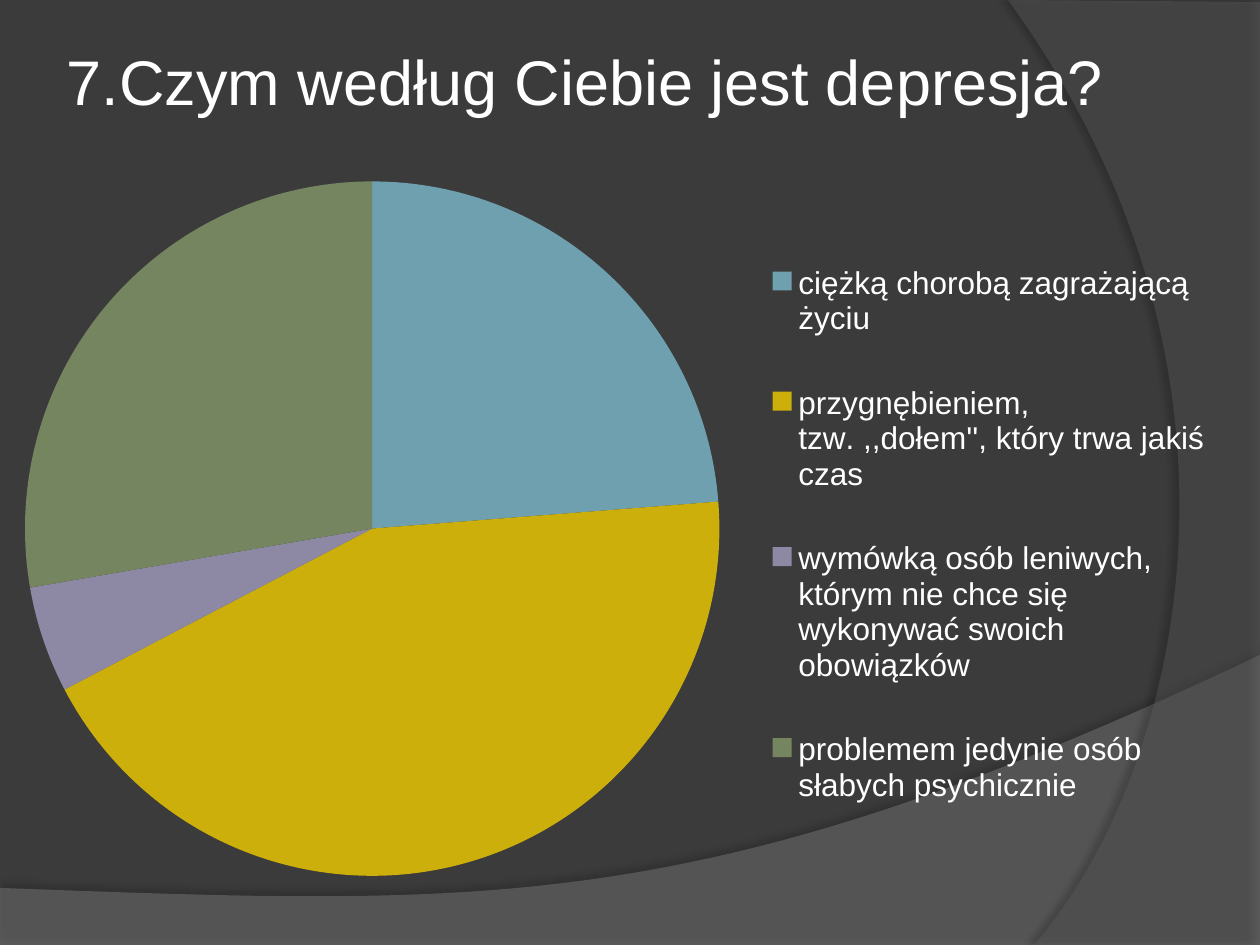
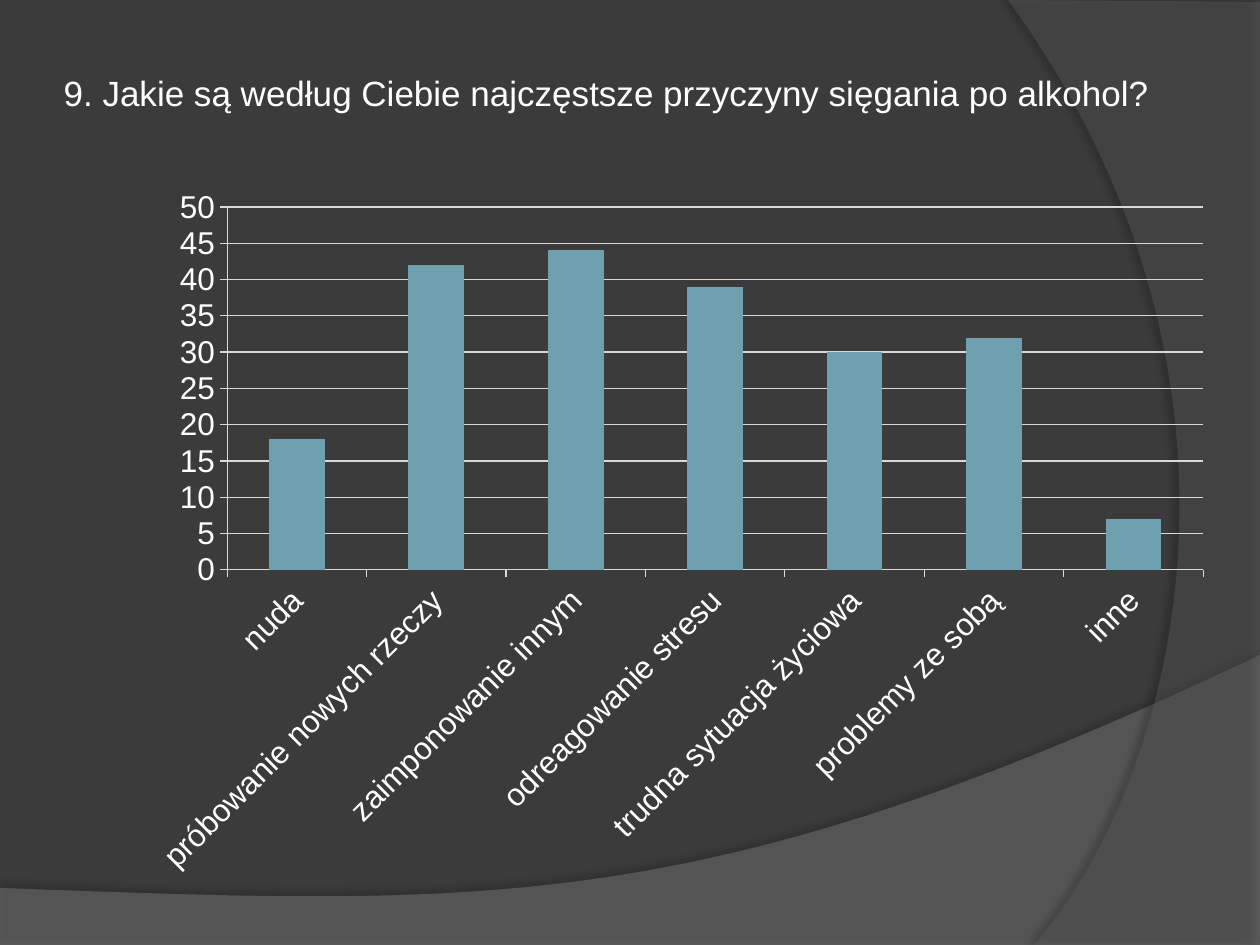
from lxml import etree
from pptx import Presentation
from pptx import util as u
from pptx.chart import data as chart_data
from pptx.dml.color import RGBColor
from pptx.enum import chart as ec, text
from pptx.oxml.ns import qn

SCALE = 914400 / 126
SLIDE_BOX = (0, 0, 1260, 945)
FONT = "Arial"

BACKGROUND = RGBColor(0x3B, 0x3B, 0x3B)
WHITE = RGBColor(0xFF, 0xFF, 0xFF)
BLACK = RGBColor(0x00, 0x00, 0x00)
LOWER_BAND = RGBColor(0x7F, 0x7F, 0x7F)
SIDE_BAND = RGBColor(0x5E, 0x5E, 0x5E)
GRID = RGBColor(0xD9, 0xD9, 0xD9)
BLUE = RGBColor(0x6E, 0xA0, 0xB0)
YELLOW = RGBColor(0xCC, 0xAF, 0x0A)
VIOLET = RGBColor(0x8D, 0x89, 0xA4)
GREEN = RGBColor(0x74, 0x85, 0x60)

DEPRESSION = {
    "ciężką chorobą zagrażającą życiu": (24, BLUE),
    "przygnębieniem, tzw. ,,dołem'', który trwa jakiś czas": (44, YELLOW),
    "wymówką osób leniwych, którym nie chce się wykonywać swoich obowiązków": (5, VIOLET),
    "problemem jedynie osób słabych psychicznie": (28, GREEN),
}
ALCOHOL = {
    "nuda": 18,
    "próbowanie nowych rzeczy": 42,
    "zaimponowanie innym": 44,
    "odreagowanie stresu": 39,
    "trudna sytuacja życiowa": 30,
    "problemy ze sobą": 32,
    "inne": 7,
}


def px(value):
    return u.Emu(round(value * SCALE))


def apply(target, values):
    for name, value in values.items():
        setattr(target, name, value)


def place(shape, box):
    apply(shape, dict(zip(("left", "top", "width", "height"), map(px, box))))


def add_child(parent, tag, **attributes):
    return etree.SubElement(parent, qn(tag), **{k: str(v) for k, v in attributes.items()})


def bend_last_edge(shape, controls):
    edge = shape.element.xpath(".//a:lnTo")[-1]
    edge_end = edge[0]
    bend = etree.Element(qn("a:cubicBezTo"))
    edge.getparent().replace(edge, bend)
    for x, y in controls:
        add_child(bend, "a:pt", x=x - shape.left, y=y - shape.top)
    bend.append(edge_end)


def add_band(slide, box, corners, controls, color, opacity, shadow):
    left, top = box[:2]
    corners, controls = ([(px(left + x), px(top + y)) for x, y in points]
                         for points in (corners, controls))
    builder = slide.shapes.build_freeform(*corners[0])
    builder.add_line_segments(corners[1:], close=True)
    shape = builder.convert_to_shape()
    closing_edges = shape.element.xpath(".//a:lnTo")
    if len(closing_edges) == len(corners):
        closing_edges[-1].getparent().remove(closing_edges[-1])
    bend_last_edge(shape, controls)
    shape.fill.solid()
    shape.fill.fore_color.rgb = color
    shape.line.fill.background()
    shape.shadow.inherit = False
    fill_color = shape.element.xpath("./p:spPr/a:solidFill/a:srgbClr")[0]
    add_child(fill_color, "a:alpha", val=opacity * 1000)
    strength, blur, distance, angle = shadow
    effects = shape.element.xpath("./p:spPr/a:effectLst")[0]
    outer = add_child(effects, "a:outerShdw", blurRad=u.Pt(blur), dist=u.Pt(distance),
                      dir=angle * 60000, algn="ctr", rotWithShape=0)
    shadow_color = add_child(outer, "a:srgbClr", val=BLACK)
    add_child(shadow_color, "a:alpha", val=strength * 1000)
    return shape


def add_master_bands(master, slide, box):
    width, height = box[2:]
    lower = [(0, 888), (0, height + 1), (width, height + 1), (width, 655), (0, 888)]
    side = [(width, 2), (width, height), (1034, height), (1008, 0)]
    bands = [add_band(slide, box, lower, [(704, 919), (493, 906)],
                      LOWER_BAND, 45, (35, 4, 3.5, 270)),
             add_band(slide, box, side, [(1178, 780), (1283, 378)],
                      SIDE_BAND, 40, (45, 4, 4, 180))]
    for index, band in enumerate(bands, 2):
        master.shapes.element.insert(index, band.element)


def add_title(slide, box, wording, size):
    title = slide.shapes.title
    place(title, box)
    title.text = wording
    apply(title.text_frame, {"word_wrap": True, "auto_size": text.MSO_AUTO_SIZE.NONE,
                             "vertical_anchor": text.MSO_ANCHOR.TOP})
    paragraph = title.text_frame.paragraphs[0]
    paragraph.alignment = text.PP_ALIGN.LEFT
    format_font(paragraph.runs[0].font, size)


def format_font(font, size):
    apply(font, {"name": FONT, "size": u.Pt(size)})
    font.color.rgb = WHITE


def set_layout(parent, index, inner, fractions):
    for old in parent.findall(qn("c:layout")):
        parent.remove(old)
    layout = etree.Element(qn("c:layout"))
    parent.insert(index, layout)
    manual = add_child(layout, "c:manualLayout")
    if inner:
        add_child(manual, "c:layoutTarget", val="inner")
    for name in ("xMode", "yMode"):
        add_child(manual, "c:" + name, val="edge")
    for name, value in zip("xywh", fractions):
        add_child(manual, "c:" + name, val=value)


def add_chart(slide, box, kind, categories, values):
    data = chart_data.CategoryChartData()
    data.categories = categories
    data.add_series("Series 1", values)
    chart = slide.shapes.add_chart(kind, *map(px, box), data).chart
    apply(chart, {"has_title": False, "has_legend": False})
    format_font(chart.font, 18)
    return chart


def add_depression_pie(slide, box):
    values, colors = zip(*DEPRESSION.values())
    chart = add_chart(slide, box, ec.XL_CHART_TYPE.PIE, list(DEPRESSION), values)
    set_layout(chart.element.xpath(".//c:plotArea")[0], 0, True, (0.067, 0.16, 0.525, 0.764))
    chart.plots[0].vary_by_categories = True
    for index, color in enumerate(colors):
        fill = chart.plots[0].series[0].points[index].format.fill
        fill.solid()
        fill.fore_color.rgb = color
    chart.has_legend = True
    apply(chart.legend, {"position": ec.XL_LEGEND_POSITION.RIGHT, "include_in_layout": False})
    format_font(chart.legend.font, 18)
    set_layout(chart.element.xpath(".//c:legend")[0], 1, False, (0.625, 0.198, 0.34, 0.7))


def add_alcohol_columns(slide, box):
    chart = add_chart(slide, box, ec.XL_CHART_TYPE.COLUMN_CLUSTERED, list(ALCOHOL),
                      ALCOHOL.values())
    apply(chart.plots[0], {"gap_width": 150, "vary_by_categories": False})
    fill = chart.plots[0].series[0].format.fill
    fill.solid()
    fill.fore_color.rgb = BLUE
    chart.value_axis.has_major_gridlines = True
    for axis in (chart.category_axis, chart.value_axis):
        axis.major_tick_mark = ec.XL_TICK_MARK.OUTSIDE
        format_font(axis.tick_labels.font, 18)
    for part in (chart.category_axis, chart.value_axis, chart.value_axis.major_gridlines):
        part.format.line.width = u.Pt(0.75)
        part.format.line.color.rgb = GRID


def main():
    presentation = Presentation()
    presentation.slide_width, presentation.slide_height = map(px, SLIDE_BOX[2:])
    master = presentation.slide_master
    master.background.fill.solid()
    master.background.fill.fore_color.rgb = BACKGROUND
    title_only = presentation.slide_layouts[5]

    slide = presentation.slides.add_slide(title_only)
    add_master_bands(master, slide, SLIDE_BOX)
    add_title(slide, (54, 36, 1171, 89), "7.Czym według Ciebie jest depresja?", 36)
    add_depression_pie(slide, (-64, 36, 1324, 909))

    slide = presentation.slides.add_slide(title_only)
    add_title(slide, (51, 65, 1209, 55),
              "9. Jakie są według Ciebie najczęstsze przyczyny sięgania po alkohol?", 20)
    add_alcohol_columns(slide, (134, 175, 1091, 714))

    presentation.save("out.pptx")


if __name__ == "__main__":
    main()
